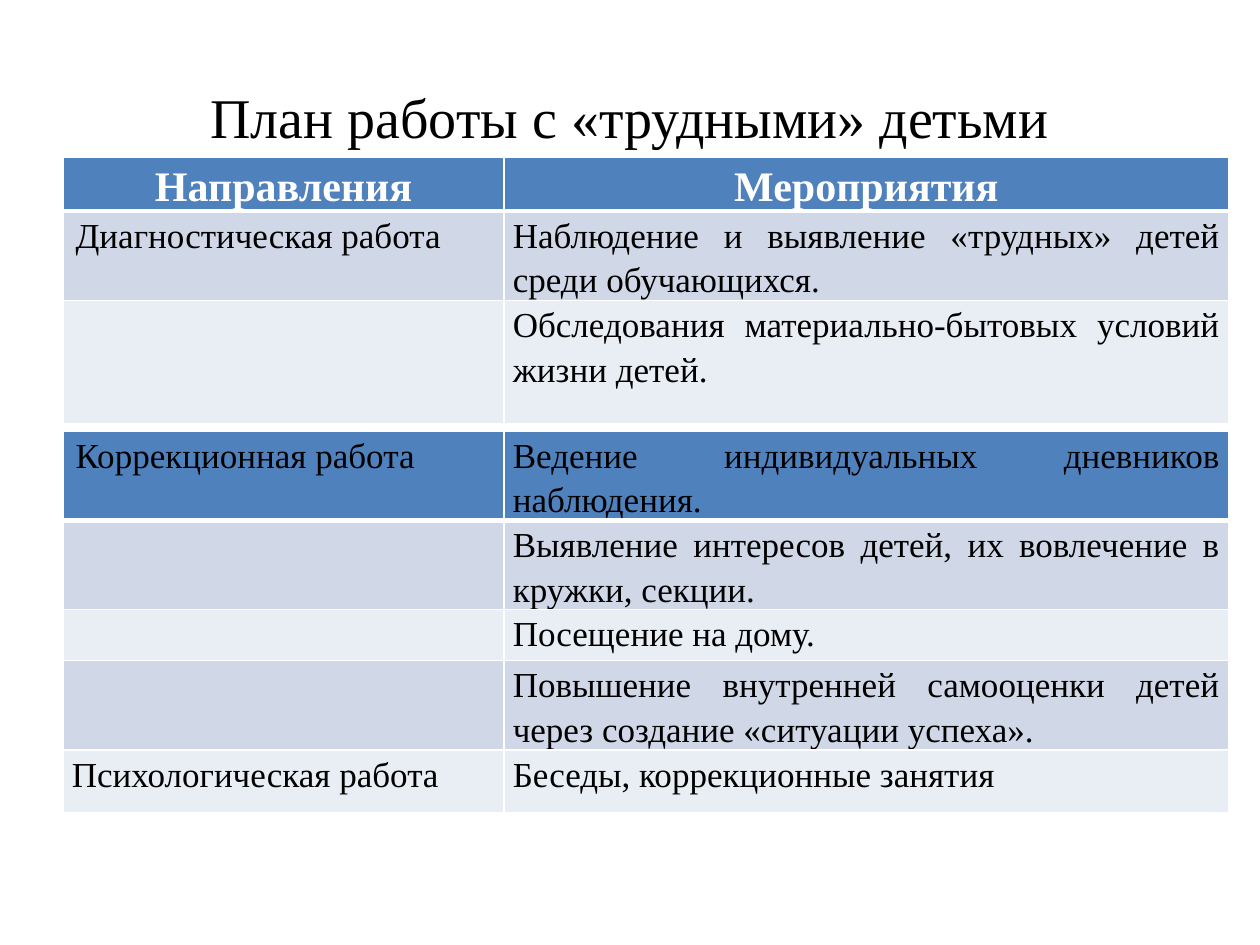
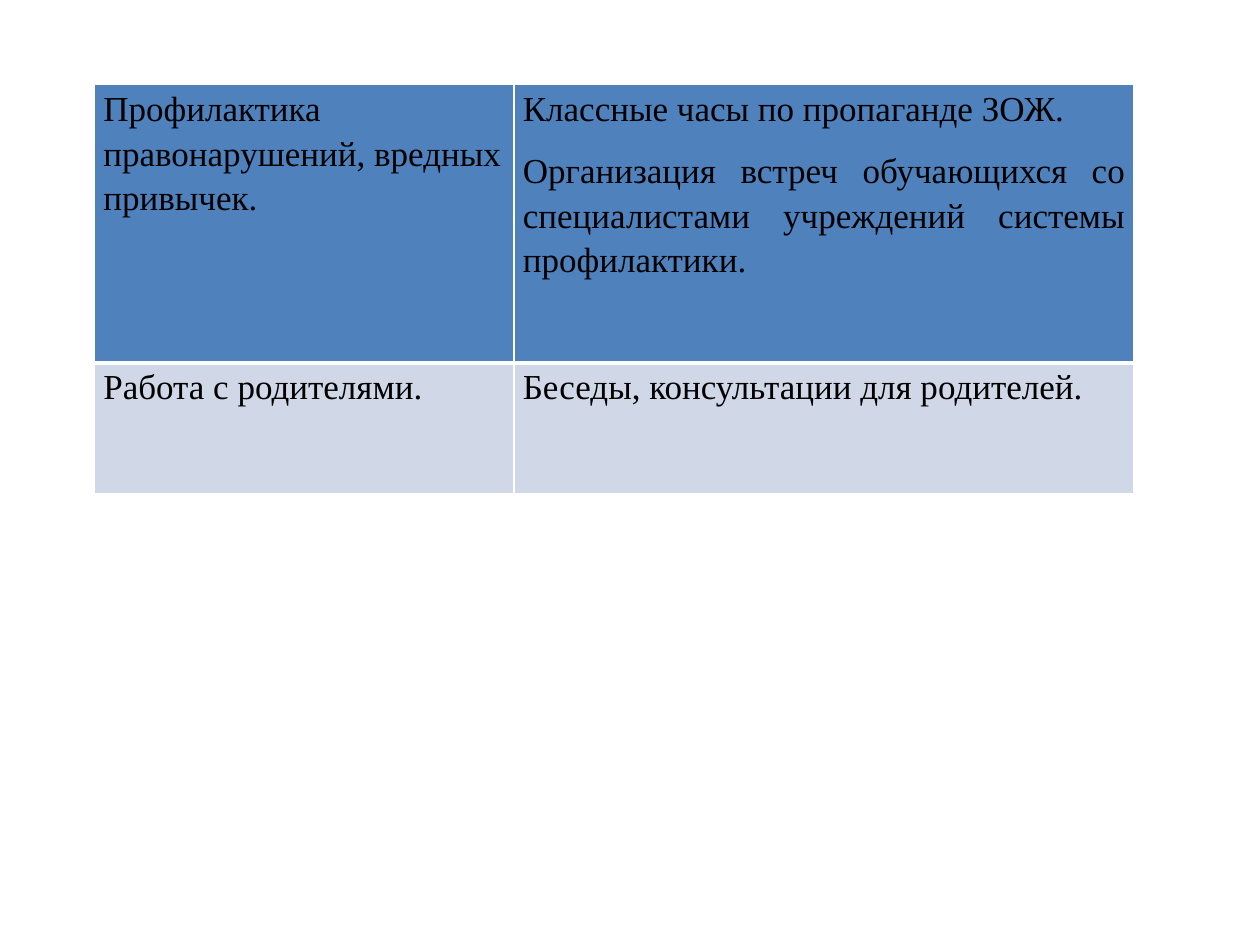
import dataclasses

import lxml.etree
import pptx
import pptx.dml.color
import pptx.enum.text
import pptx.oxml.ns
import pptx.util

Inches = pptx.util.Inches
Pt = pptx.util.Pt
RGB = pptx.dml.color.RGBColor
ALIGN = pptx.enum.text.PP_ALIGN


@dataclasses.dataclass(frozen=True)
class Theme:
    font: str = "Times New Roman"
    title_size: int = 32
    head_size: int = 24
    body_size: int = 20
    text: str = "000000"
    white: str = "FFFFFF"
    head_fill: str = "4F81BD"
    bands: tuple = ("D0D8E8", "E9EDF4")
    line: int = 1
    head_line: int = 3


THEME = Theme()


@dataclasses.dataclass(frozen=True)
class CellStyle:
    align: ALIGN = ALIGN.JUSTIFY
    size: int = THEME.body_size
    color: str = THEME.text
    bold: bool = False
    tight: bool = True


BODY = CellStyle()
LABEL = CellStyle(align=ALIGN.LEFT)
LOOSE_LABEL = CellStyle(align=ALIGN.LEFT, tight=False)
HEADING = CellStyle(ALIGN.CENTER, THEME.head_size, THEME.white, True)


def set_attributes(target, values):
    for name, value in values.items():
        setattr(target, name, value)


def format_font(font, size, color, bold=False):
    set_attributes(font, {"name": THEME.font, "size": Pt(size), "bold": bold})
    font.color.rgb = RGB.from_string(color)


def add_title(s, text):
    title = s.shapes.title
    set_attributes(title, {"left": Inches(0.5), "top": Inches(0.3),
                           "width": Inches(9), "height": Inches(1.25)})
    tf = title.text_frame
    tf.vertical_anchor = pptx.enum.text.MSO_ANCHOR.MIDDLE
    p = tf.paragraphs[0]
    p.alignment = ALIGN.CENTER
    r = p.add_run()
    r.text = text
    format_font(r.font, THEME.title_size, THEME.text)


def set_borders(cell, bottom):
    tc_pr = cell._tc.get_or_add_tcPr()
    widths = {"L": THEME.line, "R": THEME.line, "T": THEME.line, "B": bottom}
    for side, width in widths.items():
        line = lxml.etree.SubElement(tc_pr, pptx.oxml.ns.qn(f"a:ln{side}"), w=str(Pt(width)))
        fill = lxml.etree.SubElement(line, pptx.oxml.ns.qn("a:solidFill"))
        lxml.etree.SubElement(fill, pptx.oxml.ns.qn("a:srgbClr"), val=THEME.white)


def write_cell(cell, style, texts):
    if style.tight:
        set_attributes(cell, {"margin_left": Inches(0.07), "margin_right": Inches(0.07),
                              "margin_top": 0, "margin_bottom": 0})
    tf = cell.text_frame
    for i, text in enumerate(texts):
        p = tf.add_paragraph() if i else tf.paragraphs[0]
        p.alignment = style.align
        if style.tight:
            set_attributes(p, {"line_spacing": 1.15, "space_after": Pt(10)})
        r = p.add_run()
        r.text = text
        format_font(r.font, style.size, style.color, style.bold)


def add_plan_table(s, left, top, widths, heights, rows):
    table = s.shapes.add_table(len(rows), len(widths), Inches(left), Inches(top),
                               Inches(sum(widths)), Inches(sum(heights))).table
    for column, width in zip(table.columns, widths):
        column.width = Inches(width)
    for i, (row, height, contents) in enumerate(zip(table.rows, heights, rows)):
        row.height = Inches(height)
        color = THEME.bands[(i - 1) % 2] if i else THEME.head_fill
        for cell, content in zip(row.cells, contents):
            set_borders(cell, THEME.line if i else THEME.head_line)
            cell.fill.solid()
            cell.fill.fore_color.rgb = RGB.from_string(color)
            if content:
                write_cell(cell, content[0], content[1:])


def build_plan_slide(prs):
    s = prs.slides.add_slide(prs.slide_layouts[5])
    add_title(s, "План работы с «трудными» детьми")
    widths = (3.5, 5.75)
    add_plan_table(s, 0.5, 1.25, widths, (0.37, 0.64, 0.98), [
        [(HEADING, "Направления"), (HEADING, "Мероприятия")],
        [(LOOSE_LABEL, "Диагностическая работа"),
         (BODY, "Наблюдение и выявление «трудных» детей среди обучающихся.")],
        [None, (BODY, "Обследования материально-бытовых условий жизни детей.")],
    ])
    add_plan_table(s, 0.5, 3.42, widths, (0.5, 0.5, 0.33, 0.5, 0.5), [
        [(LOOSE_LABEL, "Коррекционная работа"),
         (BODY, "Ведение индивидуальных дневников наблюдения.")],
        [None, (BODY, "Выявление интересов детей, их вовлечение в кружки, секции.")],
        [None, (BODY, "Посещение на дому.")],
        [None, (BODY, "Повышение внутренней самооценки детей через создание «ситуации успеха».")],
        [(BODY, "Психологическая работа"), (BODY, "Беседы, коррекционные занятия")],
    ])


def build_prevention_slide(prs):
    s = prs.slides.add_slide(prs.slide_layouts[6])
    add_plan_table(s, 0.75, 0.67, (3.33, 4.92), (2.21, 1.04), [
        [(LABEL, "Профилактика правонарушений, вредных привычек."),
         (BODY, "Классные часы по пропаганде ЗОЖ.",
          "Организация встреч обучающихся со специалистами учреждений системы профилактики.")],
        [(LABEL, "Работа с родителями."), (BODY, "Беседы, консультации для родителей.")],
    ])


def main():
    prs = pptx.Presentation()
    set_attributes(prs, {"slide_width": Inches(10), "slide_height": Inches(7.5)})
    build_plan_slide(prs)
    build_prevention_slide(prs)
    prs.save("out.pptx")


if __name__ == "__main__":
    main()
